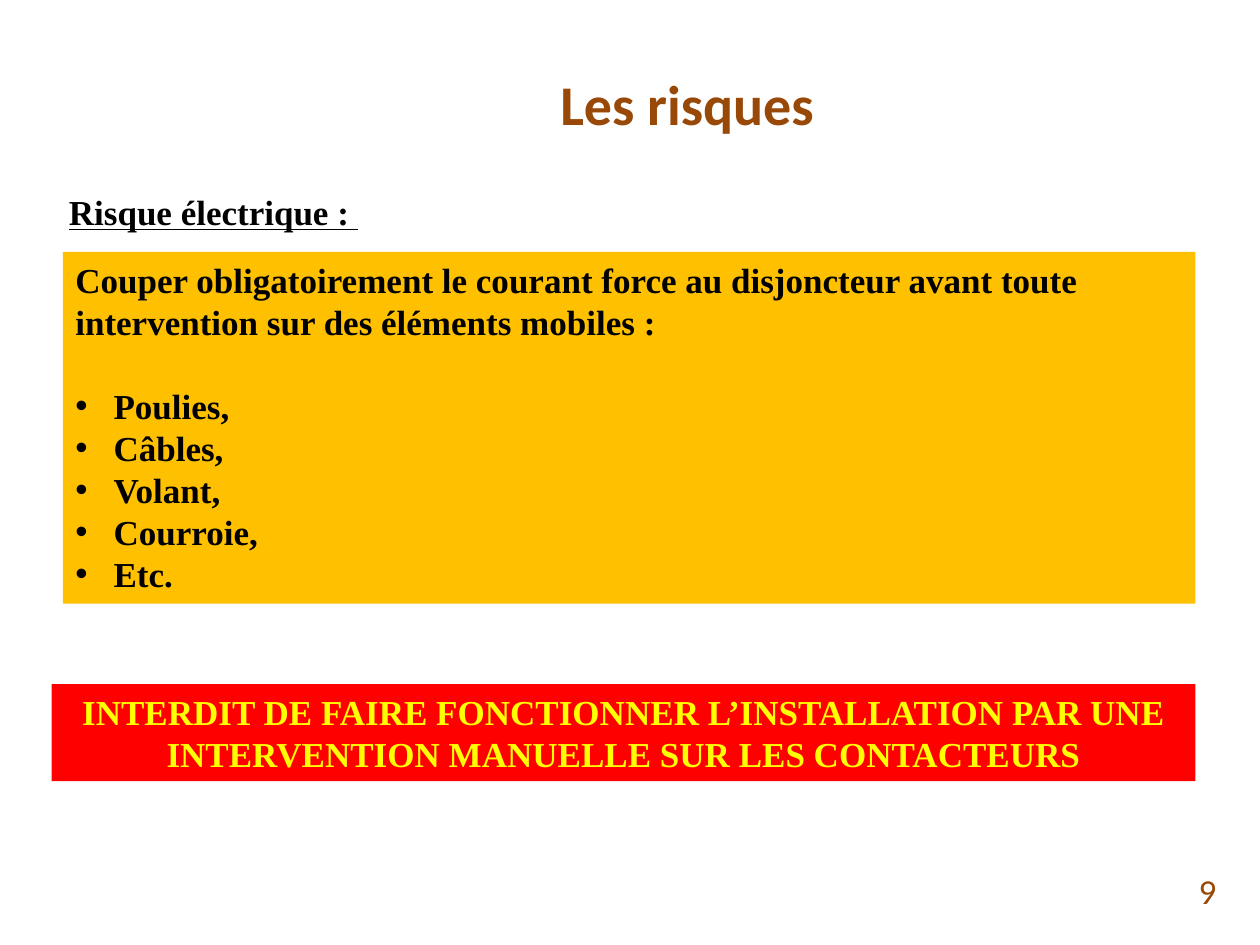
from lxml.etree import SubElement
from pptx import Presentation
from pptx.dml.color import RGBColor
from pptx.enum.text import MSO_ANCHOR, PP_ALIGN
from pptx.oxml.ns import qn
from pptx.util import Cm, Pt

TITLE = "Les risques"
PAGE_NUMBER = "9"
HEADING = "Risque électrique : "
INSTRUCTION = ("Couper obligatoirement le courant force au disjoncteur avant toute "
               "intervention sur des éléments mobiles :")
MOVING_PARTS = ["Poulies,", "Câbles,", "Volant,", "Courroie,", "Etc."]
PROHIBITION = ("INTERDIT DE FAIRE FONCTIONNER L’INSTALLATION PAR UNE "
               "INTERVENTION MANUELLE SUR LES CONTACTEURS")

BROWN, BLACK, YELLOW = "984807", "000000", "FFFF00"
AMBER, RED = "FFC000", "FF0000"
BULLET_INDENT = Cm(0.77)
LINE = Pt(24)

TITLE_FONT = {"name": "Calibri", "size": Pt(32), "bold": True}
NUMBER_FONT = {"name": "Calibri", "size": Pt(20)}
BODY_FONT = {"name": "Times New Roman", "size": Pt(20), "bold": True}
HEADING_FONT = {**BODY_FONT, "underline": True}


def color(hex_string):
    return RGBColor.from_string(hex_string)


def apply(target, formats):
    for attribute, value in formats.items():
        setattr(target, attribute, value)


def add_box(slide, place, anchor=MSO_ANCHOR.TOP, fill=None):
    """Add a text box at (left, top, width, height) in cm; return its text frame."""
    box = slide.shapes.add_textbox(*map(Cm, place))
    if fill:
        box.fill.solid()
        box.fill.fore_color.rgb = color(fill)
    apply(box.text_frame, {"word_wrap": True, "vertical_anchor": anchor})
    return box.text_frame


def write(paragraph, text, font, ink, **formats):
    paragraph.text = text
    apply(paragraph, formats)
    apply(paragraph.runs[0].font, font)
    paragraph.runs[0].font.color.rgb = color(ink)


def add_bullet(paragraph):
    properties = paragraph._p.get_or_add_pPr()
    properties.set("marL", str(BULLET_INDENT))
    properties.set("indent", str(-BULLET_INDENT))
    SubElement(properties, qn("a:buFont")).set("typeface", "Arial")
    SubElement(properties, qn("a:buChar")).set("char", "•")


def main():
    deck = Presentation()
    apply(deck, {"slide_width": Cm(25.4), "slide_height": Cm(19.05)})
    slide = deck.slides.add_slide(deck.slide_layouts[6])

    title = add_box(slide, (3.1, 0.76, 21.51, 2.62), MSO_ANCHOR.MIDDLE)
    write(title.paragraphs[0], TITLE, TITLE_FONT, BROWN, alignment=PP_ALIGN.CENTER)

    number = add_box(slide, (18.85, 17.45, 5.92, 1.02), MSO_ANCHOR.MIDDLE)
    write(number.paragraphs[0], PAGE_NUMBER, NUMBER_FONT, BROWN, alignment=PP_ALIGN.RIGHT)

    heading = add_box(slide, (1.14, 3.66, 22.76, 1.12))
    write(heading.paragraphs[0], HEADING, HEADING_FONT, BLACK,
          alignment=PP_ALIGN.JUSTIFY, line_spacing=1.07)

    instruction = add_box(slide, (1.27, 5.08, 22.83, 7.09), fill=AMBER)
    write(instruction.paragraphs[0], INSTRUCTION, BODY_FONT, BLACK, line_spacing=LINE)
    for index, part in enumerate(MOVING_PARTS):
        item = instruction.add_paragraph()
        add_bullet(item)
        write(item, part, BODY_FONT, BLACK, line_spacing=LINE,
              space_before=Pt(0) if index else LINE)

    prohibition = add_box(slide, (1.04, 13.79, 23.06, 1.96), fill=RED)
    write(prohibition.paragraphs[0], PROHIBITION, BODY_FONT, YELLOW,
          alignment=PP_ALIGN.CENTER, line_spacing=LINE)

    deck.save("out.pptx")


if __name__ == "__main__":
    main()
